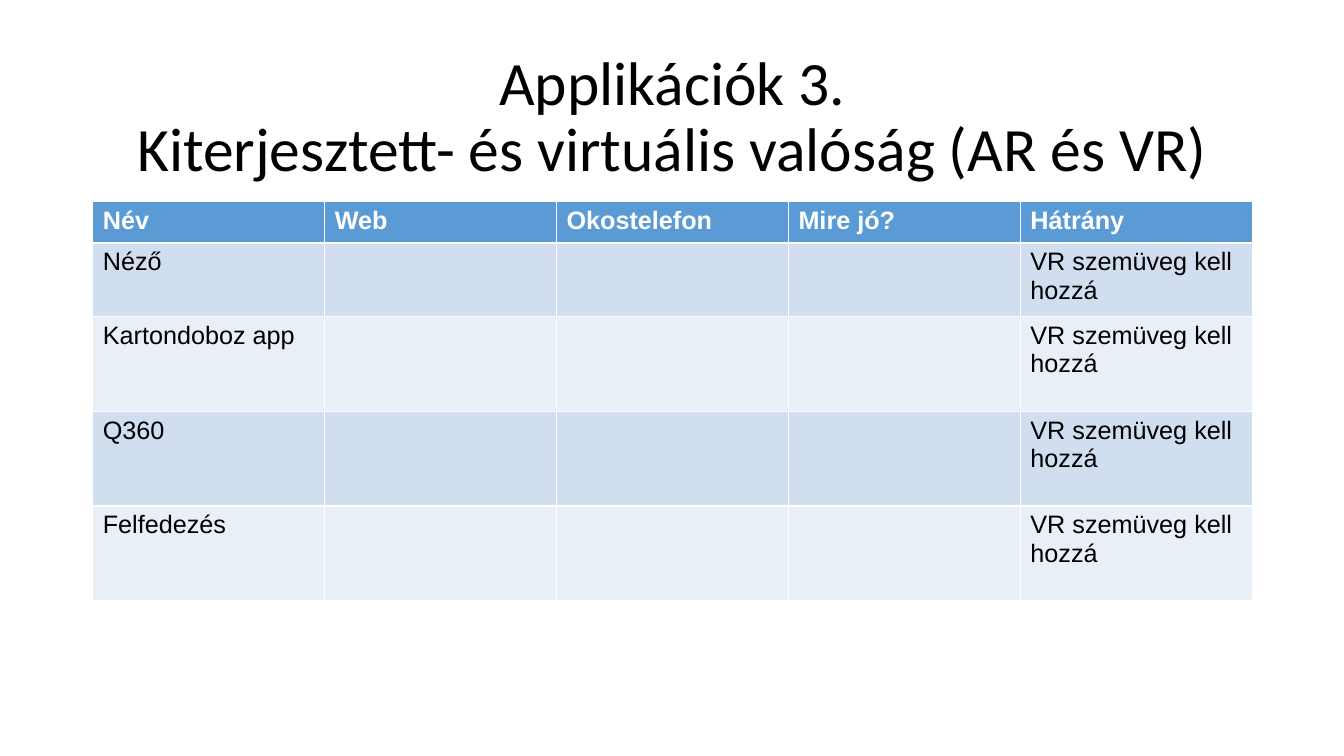
from pptx import Presentation
from pptx.dml.color import RGBColor
from pptx.enum.text import MSO_ANCHOR, MSO_AUTO_SIZE, PP_ALIGN
from pptx.util import Inches, Pt

CENTER = PP_ALIGN.CENTER
MIDDLE = MSO_ANCHOR.MIDDLE
NO_AUTOFIT = MSO_AUTO_SIZE.NONE

LEFT, COLUMN_WIDTH = 0.92, 2.3
ROW_HEIGHTS = [0.41, 0.73, 0.94, 0.94, 0.94]
HEADINGS = ["Név", "Web", "Okostelefon", "Mire jó?", "Hátrány"]
APPS = ["Néző", "Kartondoboz app", "Q360", "Felfedezés"]
DRAWBACK = "VR szemüveg kell hozzá"
HEADER_FILL, BAND_FILLS = "5B9BD5", ["E9EFF7", "D0DEEF"]


def color(value):
    return RGBColor.from_string(value)


def format_font(font, shade, **values):
    font.color.rgb = color(shade)
    for name, value in values.items():
        setattr(font, name, value)


deck = Presentation()
deck.slide_width, deck.slide_height = Inches(13.33), Inches(7.5)
page = deck.slides.add_slide(deck.slide_layouts[5])
table_width = COLUMN_WIDTH * len(HEADINGS)

title = page.shapes.title
title_place = {"left": LEFT, "top": 0.45, "width": table_width, "height": 1.45}
for name, value in title_place.items():
    setattr(title, name, Inches(value))
frame = title.text_frame
frame.text = "Applikációk 3.\vKiterjesztett- és virtuális valóság (AR és VR)"
frame_format = {"auto_size": NO_AUTOFIT, "word_wrap": True, "vertical_anchor": MIDDLE}
for name, value in frame_format.items():
    setattr(frame, name, value)
para = frame.paragraphs[0]
para.alignment, para.line_spacing = CENTER, 0.9
for span in para.runs:
    format_font(span.font, "000000", name="Calibri", size=Pt(44))

rows = [HEADINGS] + [[app, "", "", "", DRAWBACK] for app in APPS]
table = page.shapes.add_table(
    len(rows), len(HEADINGS), Inches(LEFT), Inches(2),
    Inches(table_width), Inches(sum(ROW_HEIGHTS)),
).table
for column in table.columns:
    column.width = Inches(COLUMN_WIDTH)
for row_index, texts in enumerate(rows):
    table.rows[row_index].height = Inches(ROW_HEIGHTS[row_index])
    is_header = row_index == 0
    for column_index, text in enumerate(texts):
        cell = table.cell(row_index, column_index)
        cell.fill.solid()
        cell.fill.fore_color.rgb = color(HEADER_FILL if is_header else BAND_FILLS[row_index % 2])
        if text:
            cell.text = text
            format_font(
                cell.text_frame.paragraphs[0].runs[0].font,
                "FFFFFF" if is_header else "000000",
                name="Arial", size=Pt(18), bold=is_header,
            )

deck.save("out.pptx")
